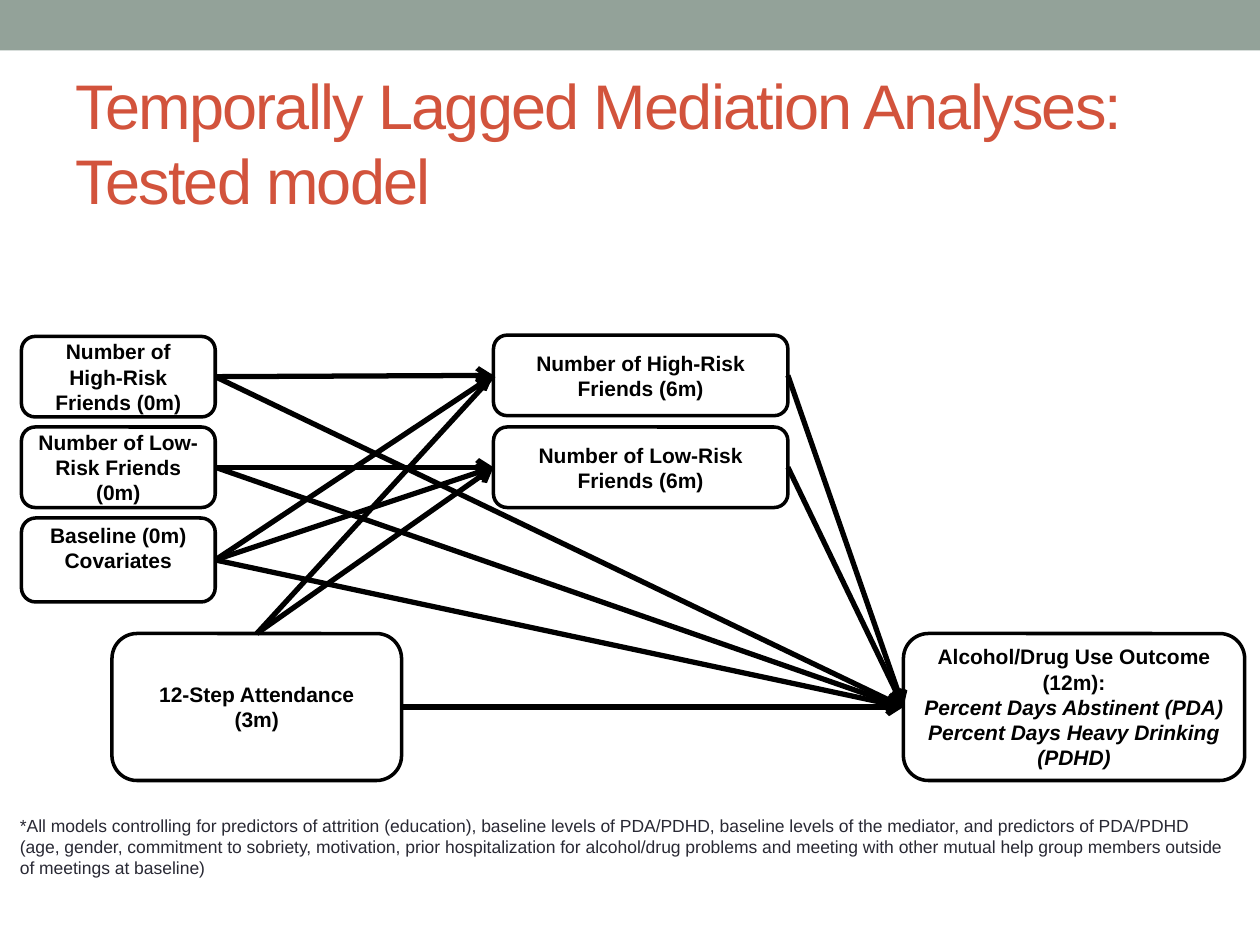
"""Build a slide showing a temporally lagged mediation model."""
from lxml.etree import SubElement
from pptx import Presentation
from pptx.dml.color import RGBColor
from pptx.enum.shapes import MSO_CONNECTOR as Connector, MSO_SHAPE as Preset
from pptx.enum.text import MSO_ANCHOR as Anchor, PP_ALIGN as Align
from pptx.oxml.ns import qn
from pptx.util import Pt

COLORS = {"band": "93A299", "title": "D2533C", "ink": "000000",
          "box": "FFFFFF", "note": "292934"}
BOX_FONT = {"name": "Arial", "size": Pt(12), "bold": True}
TITLE_FONT = {"name": "Arial", "size": Pt(36)}
NOTE_FONT = {"name": "Arial", "size": Pt(10)}
TOP, LEFT, RIGHT = 0, 1, 3


def color(name):
    return RGBColor.from_string(COLORS[name])


def write(shape, lines, font, ink, anchor, align):
    frame = shape.text_frame
    frame.word_wrap = True
    frame.vertical_anchor = anchor
    for index, line in enumerate(lines):
        paragraph = frame.add_paragraph() if index else frame.paragraphs[0]
        paragraph.alignment = align
        run = paragraph.add_run()
        run.text = line
        for key, value in font.items():
            setattr(run.font, key, value)
        run.font.color.rgb = color(ink)


presentation = Presentation()
presentation.slide_width, presentation.slide_height = Pt(720), Pt(540)
slide = presentation.slides.add_slide(presentation.slide_layouts[6])
shapes = slide.shapes

band = shapes.add_shape(Preset.RECTANGLE, 0, 0, Pt(720), Pt(28.8))
band.shadow.inherit = False
band.fill.solid()
band.fill.fore_color.rgb = color("band")
band.line.fill.background()

title = shapes.add_textbox(Pt(36), Pt(42), Pt(648), Pt(78))
write(title, ["Temporally Lagged Mediation Analyses: Tested model"],
      TITLE_FONT, "title", Anchor.MIDDLE, Align.LEFT)
title.text_frame.paragraphs[0].runs[0].font._element.set("spc", "-100")

BOXES = {
    "high 0m": (12.25, 192.25, 110.75, 46, ["Number of High-Risk Friends (0m)"]),
    "low 0m": (12.25, 244, 110.75, 46, ["Number of Low-Risk Friends (0m)"]),
    "baseline": (12.25, 296, 110.75, 48, ["Baseline (0m) Covariates"]),
    "attendance": (64, 362, 165.5, 84, ["12-Step Attendance", "(3m)"]),
    "high 6m": (282, 191.5, 168.25, 46, ["Number of High-Risk Friends (6m)"]),
    "low 6m": (282, 244, 168.25, 46, ["Number of Low-Risk Friends (6m)"]),
    "outcome": (516.25, 362, 195, 84, [
        "Alcohol/Drug Use Outcome (12m):", "Percent Days Abstinent (PDA)",
        "Percent Days Heavy Drinking (PDHD)"]),
}
boxes = {}
for name, (left, top, width, height, lines) in BOXES.items():
    box = shapes.add_shape(Preset.ROUNDED_RECTANGLE,
                           Pt(left), Pt(top), Pt(width), Pt(height))
    box.shadow.inherit = False
    box.adjustments[0] = 0.17
    box.fill.solid()
    box.fill.fore_color.rgb = color("box")
    box.line.color.rgb = color("ink")
    box.line.width = Pt(2)
    write(box, lines, BOX_FONT, "ink", Anchor.MIDDLE, Align.CENTER)
    boxes[name] = box

baseline_frame = boxes["baseline"].text_frame
baseline_frame.vertical_anchor = Anchor.TOP
baseline_frame.margin_top = 0
for paragraph in boxes["outcome"].text_frame.paragraphs[1:]:
    paragraph.runs[0].font.italic = True

PATHS = [
    ("high 0m", RIGHT, "high 6m", True),
    ("low 0m", RIGHT, "low 6m", True),
    ("high 0m", RIGHT, "outcome", True),
    ("low 0m", RIGHT, "outcome", True),
    ("baseline", RIGHT, "high 6m", True),
    ("baseline", RIGHT, "low 6m", True),
    ("baseline", RIGHT, "outcome", True),
    ("attendance", TOP, "high 6m", False),
    ("attendance", TOP, "low 6m", True),
    ("attendance", RIGHT, "outcome", True),
    ("low 6m", RIGHT, "outcome", True),
    ("high 6m", RIGHT, "outcome", True),
]
for source, side, target, has_arrow in PATHS:
    connector = shapes.add_connector(Connector.STRAIGHT, 0, 0, 0, 0)
    connector.begin_connect(boxes[source], side)
    connector.end_connect(boxes[target], LEFT)
    connector.line.color.rgb = color("ink")
    connector.line.width = Pt(3)
    if has_arrow:
        SubElement(connector.line._get_or_add_ln(), qn("a:tailEnd"), type="arrow")
    SubElement(connector._element.spPr, qn("a:effectLst"))

note = shapes.add_textbox(Pt(4.25), Pt(462.25), Pt(705), Pt(55))
write(note, [
    "*All models controlling for predictors of attrition (education), baseline "
    "levels of PDA/PDHD, baseline levels of the mediator, and predictors of "
    "PDA/PDHD (age, gender, commitment to sobriety, motivation, prior "
    "hospitalization for alcohol/drug problems and meeting with other mutual "
    "help group members outside of meetings at baseline)"],
    NOTE_FONT, "note", Anchor.TOP, Align.LEFT)

presentation.save("out.pptx")
